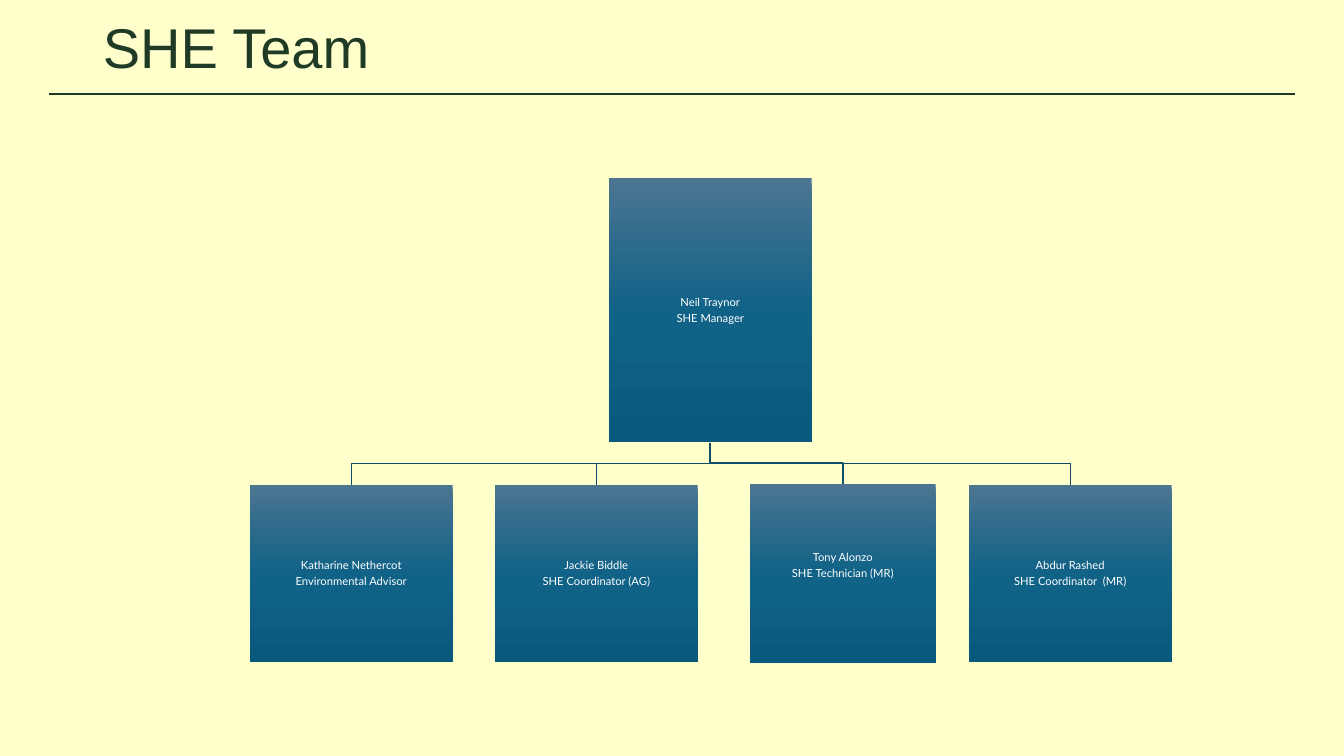
from copy import deepcopy

from pptx import Presentation
from pptx.dml.color import RGBColor
from pptx.enum.shapes import MSO_CONNECTOR, MSO_SHAPE
from pptx.enum.text import MSO_ANCHOR, MSO_AUTO_SIZE, PP_ALIGN
from pptx.oxml.ns import qn
from pptx.util import Inches, Pt
from lxml import etree

LINE, RECT = MSO_CONNECTOR.STRAIGHT, MSO_SHAPE.RECTANGLE
MIDDLE, LEFT, CENTER = MSO_ANCHOR.MIDDLE, PP_ALIGN.LEFT, PP_ALIGN.CENTER

COLORS = {
    "background": "FFFFCC",
    "title": "203B25",
    "link": "114D68",
    "text": "FFFFFF",
    "top": "4C7591",
    "mid": "106287",
    "bottom": "09597D",
}
RGB = {name: RGBColor.from_string(value) for name, value in COLORS.items()}


def set_text(shape, lines, align, font, margins):
    tf = shape.text_frame
    tf.word_wrap = True
    tf.auto_size = MSO_AUTO_SIZE.NONE
    tf.vertical_anchor = MIDDLE
    for side, inches in margins.items():
        setattr(tf, f"margin_{side}", Inches(inches))
    for i, line in enumerate(lines):
        p = tf.paragraphs[0] if i == 0 else tf.add_paragraph()
        p.alignment = align
        p.line_spacing = 0.9
        p.space_before = Pt(0)
        p.space_after = Pt(2.8 if len(lines) > 1 else 0)
        r = p.add_run()
        r.text = line
        for name, value in font.items():
            setattr(r.font, name, value)
        r.font.color.rgb = RGB["title" if align == LEFT else "text"]


def add_box(left, top, width, height, lines, bottom):
    box = s.shapes.add_shape(RECT, Inches(left), Inches(top), Inches(width), Inches(height))
    box.shadow.inherit = False
    box.line.fill.background()
    box.fill.gradient()
    box.fill.gradient_angle = 270
    # Third stop between the two default ones
    stops = box._element.spPr.find(qn("a:gradFill")).find(qn("a:gsLst"))
    stops.insert(1, deepcopy(stops[0]))
    for stop, position, name in zip(box.fill.gradient_stops, (0, 0.5, 1), ("top", "mid", "bottom")):
        stop.position = position
        stop.color.rgb = RGB[name]
    margins = {"left": 0.01, "right": 0.01, "top": 0.01, "bottom": bottom}
    set_text(box, lines, CENTER, {"size": Pt(8), "name": "Lato"}, margins)


prs = Presentation()
prs.slide_width, prs.slide_height = Inches(13.33), Inches(7.5)
s = prs.slides.add_slide(prs.slide_layouts[5])
s.background.fill.solid()
s.background.fill.fore_color.rgb = RGB["background"]

# Title and rule
title = s.shapes.title
title.left, title.top, title.width, title.height = (Inches(v) for v in (0.92, 0.11, 11.5, 0.78))
set_text(title, ["SHE Team"], LEFT, {"size": Pt(40), "name": "Arial"}, {"left": 0.1, "right": 0.1})
rule = s.shapes.add_connector(LINE, Inches(0.49), Inches(0.93), Inches(12.84), Inches(0.93))
rule.line.color.rgb = RGB["title"]
rule.line.width = Pt(1.5)
etree.SubElement(rule._element.spPr, qn("a:effectLst"))

# Team members: left, top, width, height, lines, bottom margin
MANAGER = (6.04, 1.77, 2.01, 2.62, ["Neil Traynor", "SHE Manager"], 0.01)
REPORTS = [
    (7.44, 4.8, 1.84, 1.78, ["Tony Alonzo", "SHE Technician (MR)"], 0.17),
    (9.61, 4.81, 2.01, 1.76, ["Abdur Rashed", "SHE Coordinator  (MR)"], 0.01),
    (4.91, 4.81, 2.01, 1.76, ["Jackie Biddle", "SHE Coordinator (AG)"], 0.01),
    (2.48, 4.81, 2.01, 1.76, ["Katharine Nethercot", "Environmental Advisor"], 0.01),
]

# Elbow links from the manager to each report
start_x, start_y = 7.04, MANAGER[1] + MANAGER[3]
for left, top, width, *_ in REPORTS:
    end_x, mid_y = left + width / 2, (start_y + top) / 2
    path = s.shapes.build_freeform(Inches(start_x), Inches(start_y))
    corners = [(start_x, mid_y), (end_x, mid_y), (end_x, top)]
    path.add_line_segments([(Inches(x), Inches(y)) for x, y in corners], close=False)
    link = path.convert_to_shape()
    link.shadow.inherit = False
    link.fill.background()
    link.line.color.rgb = RGB["link"]
    link.line.width = Pt(1)

# Boxes
for member in [MANAGER, *REPORTS]:
    add_box(*member)

prs.save("out.pptx")
